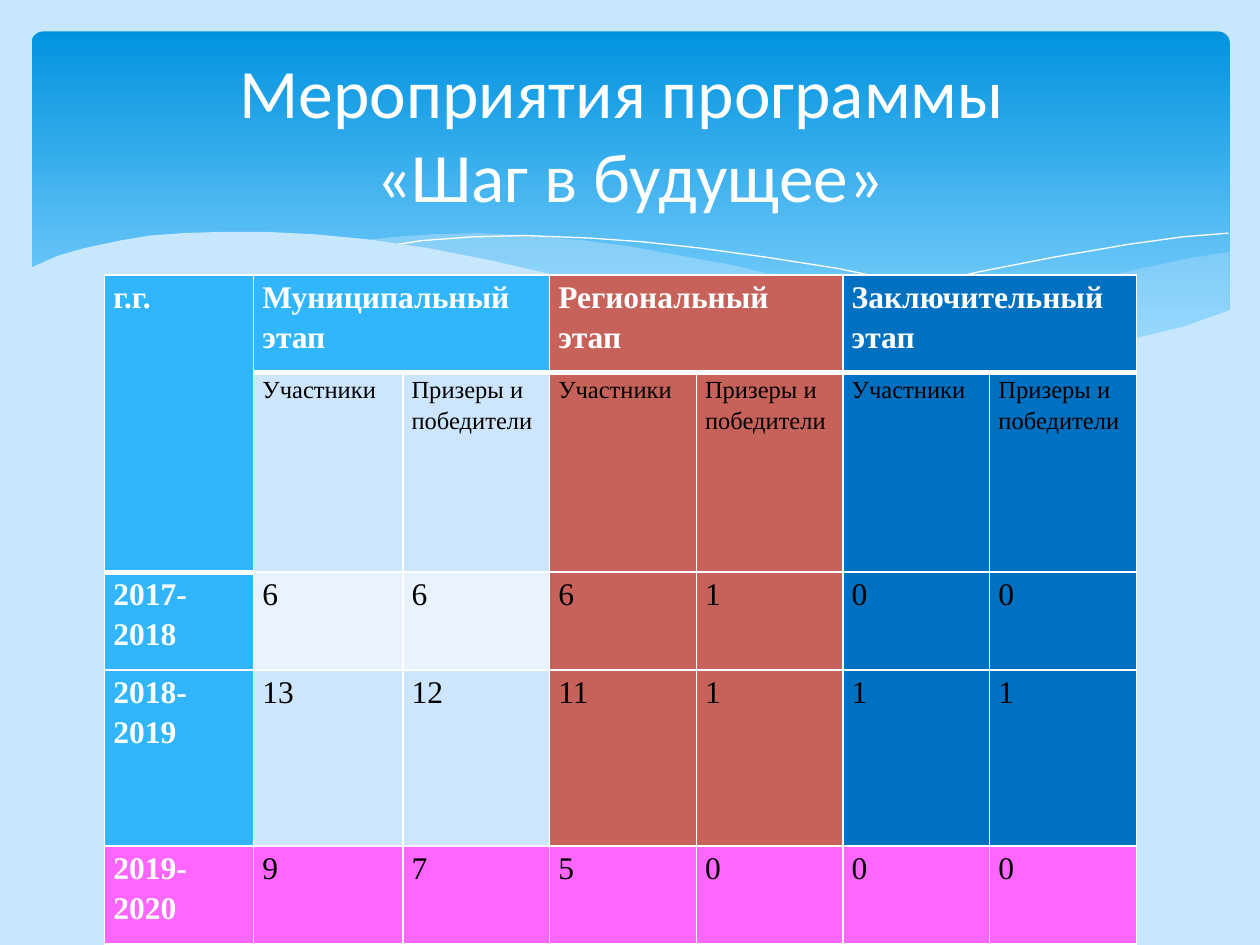
import lxml.etree
import pptx
import pptx.dml.color
import pptx.enum.shapes
import pptx.enum.text
import pptx.oxml.ns
import pptx.util

Pt = pptx.util.Pt
RGB = pptx.dml.color.RGBColor
qn = pptx.oxml.ns.qn

WHITE = RGB(0xFF, 0xFF, 0xFF)
BLACK = RGB(0, 0, 0)
PALE = RGB(0xC6, 0xE7, 0xFC)
DEEP = RGB(0x02, 0x93, 0xE0)
LIGHT = RGB(0x83, 0xD3, 0xFE)
SKY = RGB(0x31, 0xB6, 0xFD)
MIST = RGB(0xCE, 0xE5, 0xFE)
FROST = RGB(0xE8, 0xF3, 0xFF)
BRICK = RGB(0xC6, 0x62, 0x5A)
BLUE = RGB(0x00, 0x70, 0xC0)
PINK = RGB(0xFF, 0x66, 0xFF)

HEAD = {"size": Pt(18), "name": "Times New Roman", "bold": True}
BODY = {"size": Pt(18), "name": "Times New Roman", "bold": False}
SUB = {**BODY, "size": Pt(14)}
TITLE = {"size": Pt(39.6), "name": "Calibri"}

# Wave outlines, in points from the corner of the banner
RIGHT = [(684.7, 126), (664.6, 129), (634.3, 135.4), (602, 142.6), (561.6, 152.6),
         (524.2, 160.6), (490.3, 167), (458, 172.8), (479.5, 175.7), (509, 179.3),
         (535.7, 181.4), (568, 182.2), (597, 180.7), (622, 177.8), (645, 172.8),
         (665.3, 167), (684.7, 159.8)]
MID = [(625, 178.6), (584.6, 172.8), (540, 164.9), (490.3, 154.8), (435, 141.8),
       (402.5, 133.9), (371.5, 128.2), (343.4, 123.1), (316.8, 119.5), (284.4, 116.6),
       (255.6, 115.2), (229.7, 115.9), (207.4, 117.4), (188, 119.5), (228.2, 125.3),
       (273, 133.9), (305.3, 141.8), (363.6, 154.8), (414.7, 165.6), (460.8, 173.5),
       (501.8, 179.3), (538.6, 181.4), (571, 182.2), (599, 181.4)]
LONG = [(204.5, 122.4), (223.2, 119.5), (251.3, 117.4), (281.5, 116.6), (319.7, 118.1),
        (349.2, 120.2), (382.3, 123.8), (419.8, 129), (460.8, 135.4), (505.4, 144.7),
        (554.4, 155.5), (607.7, 169.9), (635, 177.8)]
SHORT = [(423.4, 167), (465.8, 155.5), (500.4, 146.9), (540.7, 137.5), (584, 129),
         (626.4, 121.7), (657.4, 117.4), (684, 115.2)]
FLOOR = [(685.4, 159), (658.8, 168.5), (629.3, 175.7), (594, 180), (564.5, 181.4),
         (530, 180), (491.8, 176.4), (448.6, 170.6), (399, 162), (344.2, 149.8),
         (303.8, 140.4), (263.5, 131), (226.8, 123.8), (192.2, 118.8), (162, 115.9),
         (134, 114.5), (109.4, 114.5), (87, 115.2), (67.7, 116.6), (50.4, 119.5),
         (30.2, 123.8), (15, 128.2), (-1.4, 135.4), (-1.4, 219), (685.4, 219)]


def style(font, form, tint):
    for key, val in form.items():
        setattr(font, key, val)
    font.color.rgb = tint


def wave(slide, left, top, dots, alpha=None, stroke=False):
    spots = [(Pt(left + x), Pt(top + y)) for x, y in dots]
    pen = slide.shapes.build_freeform(*spots[0], scale=1.0)
    pen.add_line_segments(spots[1:], close=not stroke)
    shape = pen.convert_to_shape()
    shape.shadow.inherit = False
    if stroke:
        shape.fill.background()
        shape.line.color.rgb = WHITE
        shape.line.width = Pt(0)
        return
    shape.line.fill.background()
    shape.fill.solid()
    shape.fill.fore_color.rgb = PALE
    if alpha:
        tone = shape.fill._xPr.find(".//" + qn("a:srgbClr"))
        lxml.etree.SubElement(tone, qn("a:alpha"), val=str(alpha * 1000))


def banner(slide, left, top, width, height):
    # Gradient panel
    panel = slide.shapes.add_shape(
        pptx.enum.shapes.MSO_SHAPE.ROUNDED_RECTANGLE,
        Pt(left), Pt(top), Pt(width), Pt(height))
    panel.adjustments[0] = 0.034
    panel.shadow.inherit = False
    panel.line.fill.background()
    panel.fill.gradient()
    panel.fill.gradient_angle = 270
    for stop, tint, place in zip(panel.fill.gradient_stops, (DEEP, LIGHT), (0, 0.9)):
        stop.color.rgb = tint
        stop.position = place
    # Waves over its lower edge
    wave(slide, left, top, RIGHT, alpha=29)
    wave(slide, left, top, MID, alpha=40)
    wave(slide, left, top, LONG, stroke=True)
    wave(slide, left, top, SHORT, stroke=True)
    wave(slide, left, top, FLOOR)


def border(cell, widths):
    props = cell._tc.get_or_add_tcPr()
    for spot, (side, width) in enumerate(widths.items()):
        line = lxml.etree.Element(qn("a:ln" + side), w=str(Pt(width)))
        fill = lxml.etree.SubElement(line, qn("a:solidFill"))
        lxml.etree.SubElement(fill, qn("a:srgbClr"), val=str(WHITE))
        props.insert(spot, line)


def tint_of(row, col):
    if row == 4:
        return PINK
    if col == 0 or (row == 0 and col < 3):
        return SKY
    if col < 3:
        return FROST if row == 2 else MIST
    return BRICK if col < 5 else BLUE


def results(slide, left, top):
    stages = ["Муниципальный этап", "Региональный этап", "Заключительный этап"]
    rows = [
        ["г.г."] + [text for stage in stages for text in (stage, "")],
        [""] + ["Участники", "Призеры и победители"] * 3,
        ["2017-2018", "6", "6", "6", "1", "0", "0"],
        ["2018-2019", "13", "12", "11", "1", "1", "1"],
        ["2019-2020", "9", "7", "5", "0", "0", "0"],
    ]
    wide = [85.2] * 2 + [83.85] * 5
    high = [56, 114, 56, 100.5, 56]
    table = slide.shapes.add_table(
        len(high), len(wide), Pt(left), Pt(top), Pt(sum(wide)), Pt(sum(high))).table
    table.horz_banding = False
    for part, size in zip(table.columns, wide):
        part.width = Pt(size)
    for part, size in zip(table.rows, high):
        part.height = Pt(size)
    # Heavy rule under the headings
    thick = {(0, col) for col in range(7)} | {(1, 0)}
    for row, texts in enumerate(rows):
        for col, text in enumerate(texts):
            cell = table.cell(row, col)
            cell.fill.solid()
            cell.fill.fore_color.rgb = tint_of(row, col)
            border(cell, {"L": 1, "R": 1,
                          "T": 3 if (row - 1, col) in thick else 1,
                          "B": 3 if (row, col) in thick else 1})
            cell.margin_left = cell.margin_right = Pt(5)
            cell.margin_top = cell.margin_bottom = 0
            if text:
                para = cell.text_frame.paragraphs[0]
                para.line_spacing = 1.15
                run = para.add_run()
                run.text = text
                head = row == 0 or col == 0
                form = HEAD if head else SUB if row == 1 else BODY
                style(run.font, form, WHITE if head else BLACK)
    # Merged headings
    table.cell(0, 0).merge(table.cell(1, 0))
    for col in (1, 3, 5):
        table.cell(0, col).merge(table.cell(0, col + 1))


def title(slide, left, top, width, height):
    frame = slide.shapes.add_textbox(
        Pt(left), Pt(top), Pt(width), Pt(height)).text_frame
    frame.word_wrap = True
    frame.vertical_anchor = pptx.enum.text.MSO_ANCHOR.MIDDLE
    para = frame.paragraphs[0]
    para.alignment = pptx.enum.text.PP_ALIGN.CENTER
    for text in ("Мероприятия программы ", "«Шаг в будущее»"):
        if para.runs:
            para.add_line_break()
        run = para.add_run()
        run.text = text
        style(run.font, TITLE, WHITE)


def main():
    deck = pptx.Presentation()
    deck.slide_width, deck.slide_height = Pt(720), Pt(540)
    slide = deck.slides.add_slide(deck.slide_layouts[6])
    slide.background.fill.solid()
    slide.background.fill.fore_color.rgb = PALE
    banner(slide, 18, 18, 684.7, 194.4)
    results(slide, 59.8, 157)
    title(slide, 36, 26.6, 648, 98.6)
    deck.save("out.pptx")


if __name__ == "__main__":
    main()
